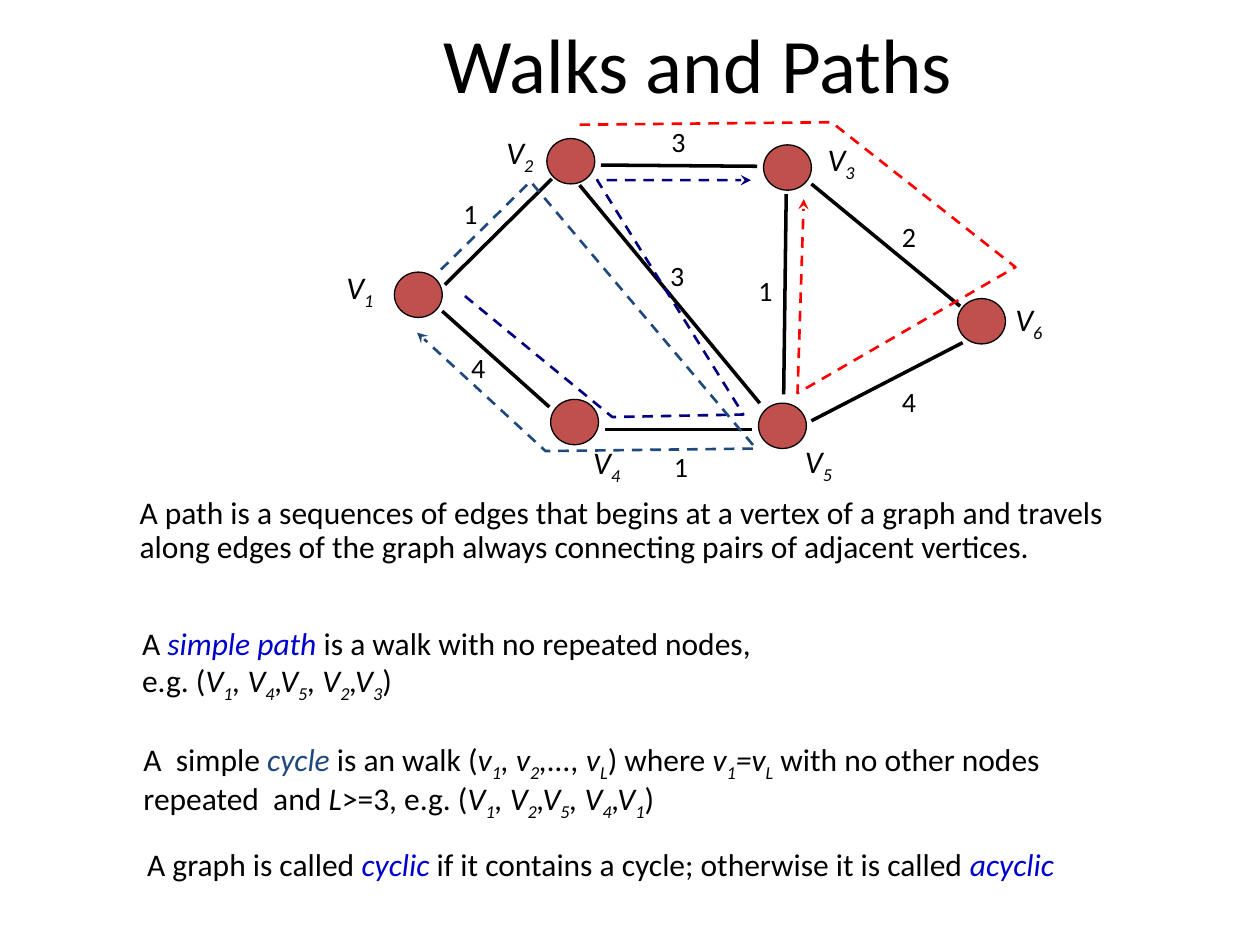
from pptx import Presentation, util as u
from pptx.dml.color import RGBColor
from pptx.enum import dml, shapes, text
from pptx.oxml.ns import qn
from lxml import etree

COLOURS = {"ink": "000000", "label": "020100", "node": "C0504D", "term": "0000CC",
           "cycle": "1F497D", "path": "000080", "walk": "FF0000"}
NODE_SIZE = (0.38, 0.36)

# node corner, label corner
VERTICES = {
    1: ((3.13, 2.16), (2.65, 2.08)),
    2: ((4.34, 1.10), (3.92, 1.01)),
    3: ((6.06, 1.15), (6.47, 1.06)),
    4: ((4.37, 3.17), (4.61, 3.47)),
    5: ((6.02, 3.20), (6.29, 3.46)),
    6: ((7.60, 2.37), (7.96, 2.33)),
}

# start, end, weight, weight corner
EDGES = [
    ((3.53, 2.26), (4.38, 1.42), 1, (3.58, 1.51)),
    ((6.22, 3.13), (6.24, 1.54), 1, (5.92, 2.12)),
    ((6.03, 3.20), (4.60, 1.47), 3, (5.22, 2.00)),
    ((6.01, 1.32), (4.77, 1.31), 3, (5.23, 0.94)),
    ((7.64, 2.72), (6.44, 3.34), 4, (7.06, 3.00)),
    ((3.51, 2.47), (4.36, 3.23), 4, (3.64, 2.73)),
    ((7.62, 2.43), (6.44, 1.46), 2, (7.06, 1.69)),
    ((4.80, 3.41), (5.97, 3.41), 1, (5.25, 3.52)),
]

ROUTES = {
    "walk": [(4.60, 0.99), (6.60, 0.97), (8.06, 2.12), (6.33, 3.12), (6.38, 1.58)],
    "path": [(3.69, 2.35), (4.86, 3.31), (5.90, 3.29), (4.74, 1.43), (5.96, 1.43)],
    "cycle": [(3.50, 2.14), (4.21, 1.44), (6.00, 3.56), (4.33, 3.58), (3.31, 2.64)],
}


def plain(words):
    return [(words, {})]


def term(words, colour="term"):
    return [(words, {"colour": colour, "italic": True})]


def maths(formula):
    first, *rest = formula.split("_")
    spans = [(first, {"italic": True})]
    for piece in rest:
        spans.append((piece[0], {"italic": True, "sub": True}))
        if piece[1:]:
            spans.append((piece[1:], {"italic": True}))
    return spans


STATEMENTS = [
    ((1.01, 3.90, 8.31, 1.19), 0.9,
     [plain("A path is a sequences of edges that begins at a vertex of a graph and travels "
            "along edges of the graph always connecting pairs of adjacent vertices.")]),
    ((1.03, 4.90, 7.47, 0.90), 1.0,
     [plain("A ") + term("simple path") + plain(" is a walk with no repeated nodes, "),
      plain("e.g. (") + maths("V_1, V_4,V_5, V_2,V_3") + plain(")")]),
    ((1.04, 5.83, 7.92, 0.65), 0.9,
     [plain("A  simple ") + term("cycle", "cycle") + plain(" is an walk (")
      + maths("v_1, v_2,..., v_L") + plain(") where ") + maths("v_1=v_L")
      + plain(" with no other nodes repeated  and ") + maths("L") + plain(">=3, e.g. (")
      + maths("V_1, V_2,V_5, V_4,V_1") + plain(")")]),
    ((1.07, 6.69, 8.03, 0.82), 0.9,
     [plain("A graph is called ") + term("cyclic")
      + plain(" if it contains a cycle; otherwise it is called ") + term("acyclic")]),
]


class GraphPage:
    """Holds the style and the current slide, and draws each kind of element."""

    font = "Calibri"

    def __init__(self, page):
        self.page = page

    def colour(self, name):
        return RGBColor.from_string(COLOURS[name])

    def text(self, area, lines, size=18, colour="ink", spacing=1.0, wrap=True,
             align=text.PP_ALIGN.LEFT, anchor=text.MSO_ANCHOR.TOP):
        box = self.page.shapes.add_textbox(*map(u.Inches, area))
        frame = box.text_frame
        frame.word_wrap = wrap
        frame.vertical_anchor = anchor
        para = frame.paragraphs[0]
        para.alignment = align
        para.line_spacing = spacing
        for index, line in enumerate(lines):
            if index:
                para.add_line_break()
            for words, style in line:
                span = para.add_run()
                span.text = words
                span.font.name = self.font
                span.font.size = u.Pt(size)
                span.font.italic = style.get("italic", False)
                span.font.color.rgb = self.colour(style.get("colour", colour))
                if style.get("sub"):
                    span.font._element.set("baseline", "-25000")

    def node(self, corner):
        circle = self.page.shapes.add_shape(
            shapes.MSO_SHAPE.OVAL, *map(u.Inches, corner + NODE_SIZE))
        circle.shadow.inherit = False
        circle.fill.solid()
        circle.fill.fore_color.rgb = self.colour("node")
        circle.line.color.rgb = self.colour("label")
        circle.line.width = u.Pt(0.75)

    def edge(self, start, end):
        line = self.page.shapes.add_connector(
            shapes.MSO_CONNECTOR.STRAIGHT, *map(u.Inches, start + end))
        line.line.color.rgb = self.colour("ink")
        line.line.width = u.Pt(2)
        etree.SubElement(line._element.spPr, qn("a:effectLst"))

    def route(self, points, colour):
        start, *rest = [tuple(map(u.Inches, point)) for point in points]
        builder = self.page.shapes.build_freeform(*start)
        builder.add_line_segments(rest, close=False)
        route = builder.convert_to_shape()
        route.shadow.inherit = False
        route.fill.background()
        route.line.color.rgb = self.colour(colour)
        route.line.width = u.Pt(1.5)
        route.line.dash_style = dml.MSO_LINE.DASH
        outline = route._element.spPr.find(qn("a:ln"))
        etree.SubElement(outline, qn("a:tailEnd"), type="stealth")


def main():
    deck = Presentation()
    deck.slide_width, deck.slide_height = u.Inches(10), u.Inches(7.5)
    graph = GraphPage(deck.slides.add_slide(deck.slide_layouts[6]))
    graph.text((1.25, 0.08, 8.58, 0.83), [plain("Walks and Paths")], size=44,
               align=text.PP_ALIGN.CENTER, anchor=text.MSO_ANCHOR.MIDDLE)
    for start, end, weight, corner in EDGES:
        graph.edge(start, end)
        graph.text(corner + (0.31, 0.37), [plain(str(weight))], size=16,
                   colour="label", wrap=False)
    for number, (corner, label) in VERTICES.items():
        graph.node(corner)
        graph.text(label + (0.53, 0.40), [maths(f"V_{number}")])
    for area, spacing, lines in STATEMENTS:
        graph.text(area, lines, spacing=spacing)
    for colour, points in ROUTES.items():
        graph.route(points, colour)
    deck.save("out.pptx")


if __name__ == "__main__":
    main()
